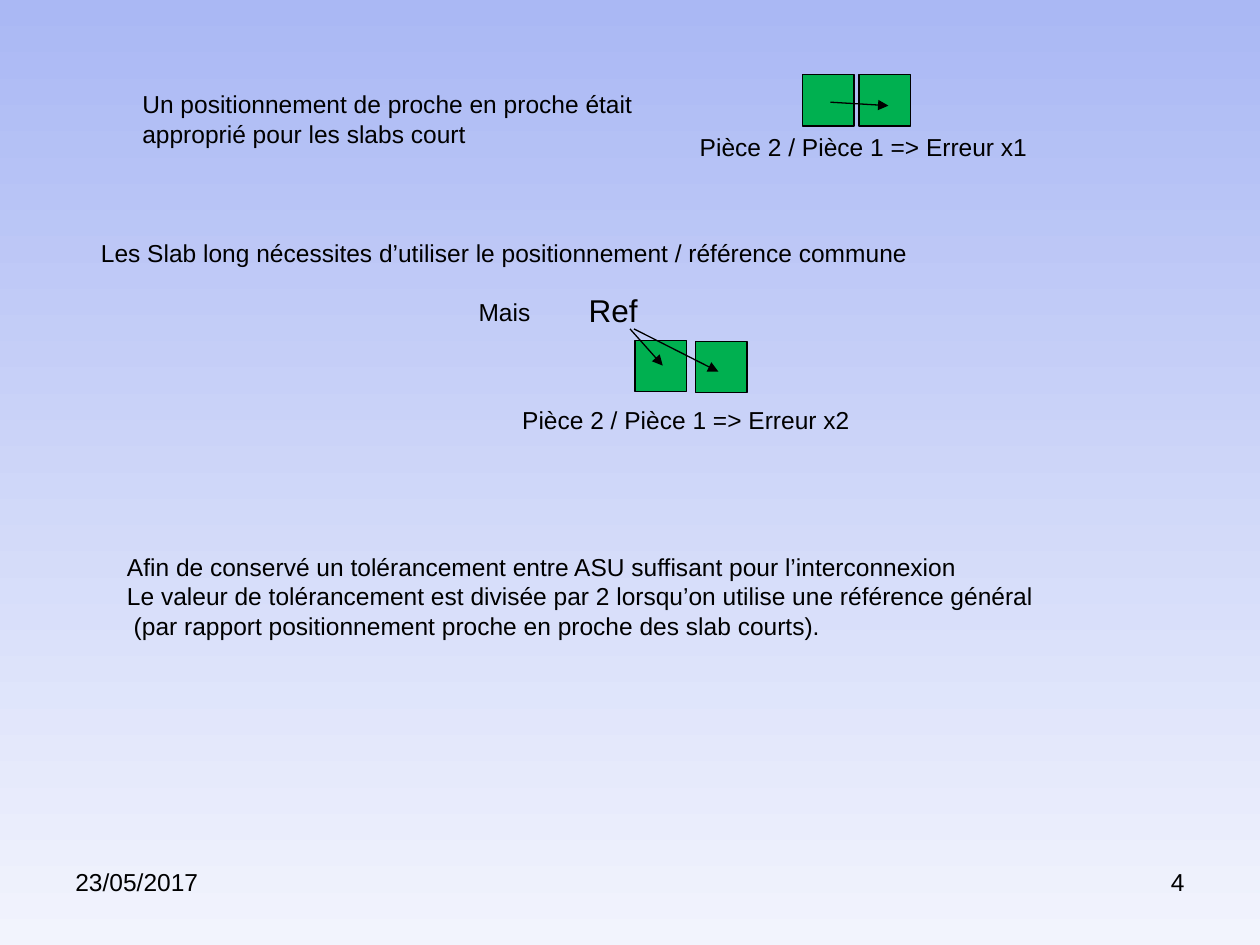
from lxml import etree
from pptx import Presentation
from pptx.dml.color import RGBColor
from pptx.enum.shapes import MSO_CONNECTOR, MSO_SHAPE
from pptx.enum.text import PP_ALIGN
from pptx.oxml.ns import qn
from pptx.util import Cm, Pt

LEFT, CENTER, RIGHT = PP_ALIGN.LEFT, PP_ALIGN.CENTER, PP_ALIGN.RIGHT
RECT, STRAIGHT = MSO_SHAPE.RECTANGLE, MSO_CONNECTOR.STRAIGHT
BLACK, GREEN = "000000", "00B050"
SQUARE = 1.04


def rgb(value):
    return RGBColor.from_string(value)


def add_text(shapes, box, paragraphs, align=LEFT, size=14, gap=0, wrap=False):
    """Add a text box; each paragraph is a list of lines, gap is in points."""
    tf = shapes.add_textbox(*map(Cm, box)).text_frame
    tf.word_wrap = wrap
    for i, lines in enumerate(paragraphs):
        p = tf.paragraphs[0] if i == 0 else tf.add_paragraph()
        p.alignment = align
        p.space_before = Pt(gap if i else 0)
        for j, line in enumerate(lines):
            if j:
                p.add_line_break()
            r = p.add_run()
            r.text = line
            r.font.name = "Arial"
            r.font.size = Pt(size)
            r.font.color.rgb = rgb(BLACK)


prs = Presentation()
prs.slide_width, prs.slide_height = Cm(25.4), Cm(19.05)
s = prs.slides.add_slide(prs.slide_layouts[6])

fill = s.background.fill
fill.gradient()
fill.gradient_angle = 270
for stop, color in zip(fill.gradient_stops, ("AAB8F4", "F2F4FD")):
    stop.color.rgb = rgb(color)

# Footer
add_text(s.shapes, (1.27, 17.35, 5.92, 1.32), [["23/05/2017"]], wrap=True)
add_text(s.shapes, (18.21, 17.35, 5.92, 1.32), [["4"]], RIGHT, wrap=True)

add_text(s.shapes, (2.62, 1.68, 10.44, 2.06),
         [["Un positionnement de proche en proche était",
           "approprié pour les slabs court"]])

# Diagrams: square corners, label box of the reference, arrows
diagrams = [
    ([(16.18, 1.5), (17.32, 1.5)], None,
     [(16.74, 2.06, 17.91, 2.13)]),
    ([(12.8, 6.86), (14.02, 6.88)], (11.61, 5.74, 1.5, 1.02),
     [(12.78, 6.63, 14.48, 7.49), (12.7, 6.63, 13.36, 7.37)]),
]
for squares, ref_box, arrows in diagrams:
    group = s.shapes.add_group_shape().shapes
    for x, y in squares:
        sp = group.add_shape(RECT, Cm(x), Cm(y), Cm(SQUARE), Cm(SQUARE))
        sp.shadow.inherit = False
        sp.fill.solid()
        sp.fill.fore_color.rgb = rgb(GREEN)
        sp.line.color.rgb = rgb(BLACK)
        sp.line.width = Pt(0.75)
    if ref_box:
        add_text(group, ref_box, [["Ref"]], CENTER, size=18)
    for ends in arrows:
        arrow = group.add_connector(STRAIGHT, *map(Cm, ends))
        arrow.line.color.rgb = rgb(BLACK)
        arrow.line.width = Pt(0.75)
        ln = arrow.line._get_or_add_ln()
        etree.SubElement(ln, qn("a:tailEnd"), type="triangle")
        etree.SubElement(arrow._element.spPr, qn("a:effectLst"))

add_text(s.shapes, (13.79, 2.54, 7.24, 0.86),
         [["Pièce 2 / Pièce 1 => Erreur x1 "]], CENTER)
add_text(s.shapes, (10.21, 8.05, 7.24, 0.86),
         [["Pièce 2 / Pièce 1 => Erreur x2 "]], CENTER)
add_text(s.shapes, (1.75, 4.67, 16.84, 2.64),
         [["Les Slab long nécessites d’utiliser le positionnement / référence commune"],
          ["Mais"]], CENTER, gap=17)
add_text(s.shapes, (2.31, 11, 18.85, 2.64),
         [["Afin de conservé un tolérancement entre ASU suffisant pour l’interconnexion",
           "Le valeur de tolérancement est divisée par 2 lorsqu’on utilise une référence général",
           " (par rapport positionnement proche en proche des slab courts)."]])

prs.save("out.pptx")
